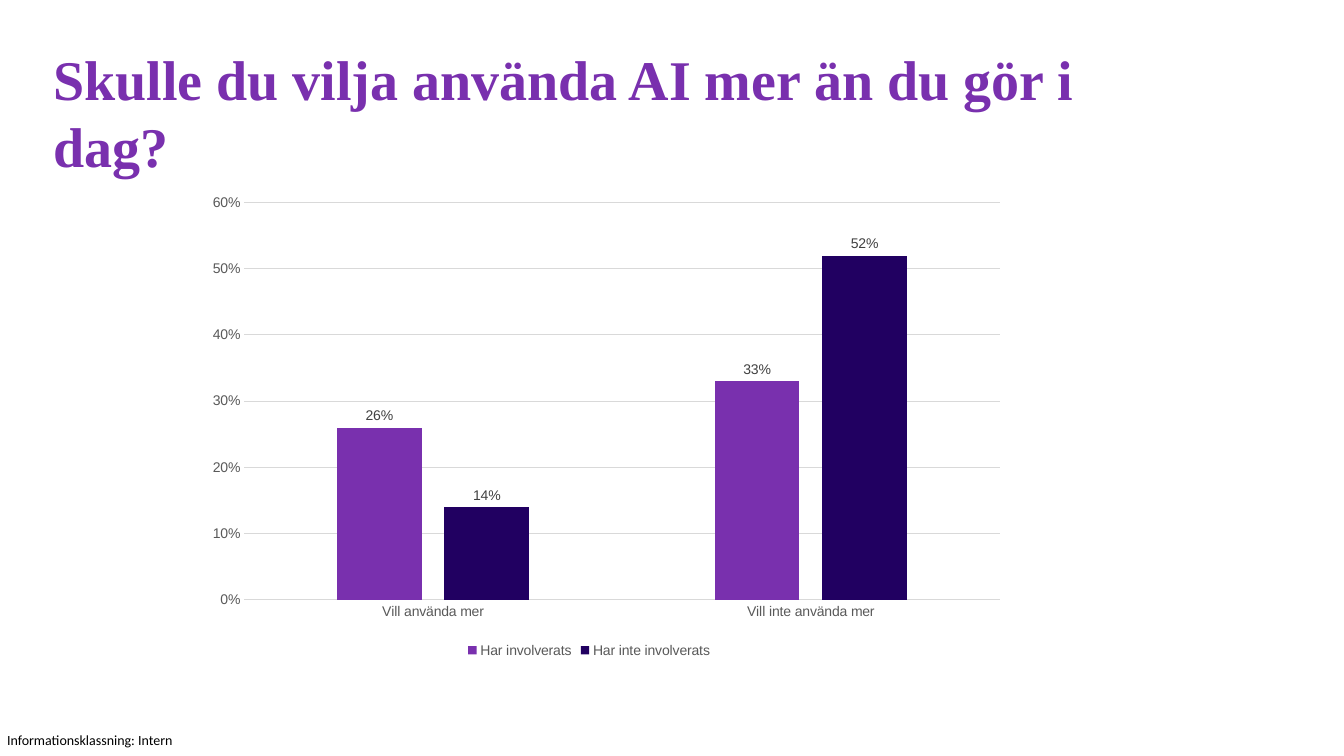
from lxml import etree
from pptx import Presentation
from pptx.chart.data import CategoryChartData as ChartData
from pptx.dml.color import RGBColor
from pptx.enum.chart import XL_CHART_TYPE as ChartType
from pptx.enum.chart import XL_LABEL_POSITION as LabelPosition
from pptx.enum.chart import XL_LEGEND_POSITION as LegendPosition
from pptx.enum.chart import XL_TICK_MARK as TickMark
from pptx.enum.text import MSO_ANCHOR as Anchor
from pptx.oxml.ns import qn
from pptx.util import Inches, Pt

PURPLE = RGBColor(0x79, 0x30, 0xAE)
INDIGO = RGBColor(0x21, 0x00, 0x61)
BLACK = RGBColor(0x00, 0x00, 0x00)
LABEL_GRAY = RGBColor(0x40, 0x40, 0x40)
AXIS_GRAY = RGBColor(0x59, 0x59, 0x59)
GRID_GRAY = RGBColor(0xD9, 0xD9, 0xD9)


class SlideBuilder:
    title_font = "Times New Roman"
    chart_font = "Arial"
    footer_font = "Calibri"
    small_size = 10

    def __init__(self, page):
        self.page = page

    def style(self, font, name, size, color, bold=False):
        font.name = name
        font.size = Pt(size)
        font.color.rgb = color
        font.bold = bold

    def text(self, words, area, name, size, color, bold=False,
             anchor=Anchor.TOP, wrap=True, spacing=None):
        box = self.page.shapes.add_textbox(*map(Inches, area))
        frame = box.text_frame
        frame.margin_left = frame.margin_right = 0
        frame.margin_top = frame.margin_bottom = 0
        frame.word_wrap = wrap
        frame.vertical_anchor = anchor
        para = frame.paragraphs[0]
        para.line_spacing = spacing
        span = para.add_run()
        span.text = words
        self.style(span.font, name, size, color, bold)

    def small(self, font, color):
        self.style(font, self.chart_font, self.small_size, color)

    def gray_line(self, line):
        line.color.rgb = GRID_GRAY
        line.width = Pt(0.75)

    def place_plot(self, chart, fractions):
        area = chart._chartSpace.chart.plotArea
        for old in area.findall(qn("c:layout")):
            area.remove(old)
        layout = etree.Element(qn("c:layout"))
        manual = etree.SubElement(layout, qn("c:manualLayout"))
        settings = [("layoutTarget", "inner"), ("xMode", "edge"), ("yMode", "edge")]
        settings += zip("xywh", fractions)
        for tag, value in settings:
            etree.SubElement(manual, qn(f"c:{tag}")).set("val", str(value))
        area.insert(0, layout)

    def column_chart(self, area, categories, series_rows, plot_fractions):
        data = ChartData(number_format="0%")
        data.categories = categories
        for name, values, _ in series_rows:
            data.add_series(name, values)
        chart = self.page.shapes.add_chart(
            ChartType.COLUMN_CLUSTERED, *map(Inches, area), data).chart
        self.small(chart.font, BLACK)
        chart.has_title = False
        chart.has_legend = True
        chart.legend.position = LegendPosition.BOTTOM
        chart.legend.include_in_layout = False
        self.small(chart.legend.font, AXIS_GRAY)

        for axis in (chart.category_axis, chart.value_axis):
            axis.major_tick_mark = axis.minor_tick_mark = TickMark.NONE
            self.small(axis.tick_labels.font, AXIS_GRAY)
        self.gray_line(chart.category_axis.format.line)
        value_axis = chart.value_axis
        value_axis.minimum_scale = 0
        value_axis.maximum_scale = 0.6
        value_axis.major_unit = 0.1
        value_axis.format.line.fill.background()
        value_axis.tick_labels.number_format = "0%"
        value_axis.tick_labels.number_format_is_linked = False
        self.gray_line(value_axis.major_gridlines.format.line)

        plot = chart.plots[0]
        plot.gap_width = 219
        plot.overlap = -27
        plot.vary_by_categories = False
        for series, (_, _, color) in zip(plot.series, series_rows):
            series.format.fill.solid()
            series.format.fill.fore_color.rgb = color
            labels = series.data_labels
            labels.show_value = True
            labels.position = LabelPosition.OUTSIDE_END
            labels.number_format = "0%"
            labels.number_format_is_linked = False
            self.small(labels.font, LABEL_GRAY)
        self.place_plot(chart, plot_fractions)


def main():
    deck = Presentation()
    deck.slide_width = Inches(13.33)
    deck.slide_height = Inches(7.5)
    builder = SlideBuilder(deck.slides.add_slide(deck.slide_layouts[6]))
    builder.text("Informationsklassning: Intern", (0.07, 7.26, 1.68, 0.17),
                 builder.footer_font, builder.small_size, BLACK, wrap=False)
    builder.text("Skulle du vilja använda AI mer än du gör i dag?",
                 (0.53, 0.4, 10.63, 1.42), builder.title_font, 40, PURPLE,
                 bold=True, anchor=Anchor.MIDDLE, spacing=Pt(48))
    builder.column_chart(
        (1.77, 1.82, 8.15, 4.75),
        ["Vill använda mer", "Vill inte använda mer"],
        [("Har involverats", (0.26, 0.33), PURPLE),
         ("Har inte involverats", (0.14, 0.52), INDIGO)],
        (0.08, 0.04, 0.92, 0.83))
    deck.save("out.pptx")


if __name__ == "__main__":
    main()
